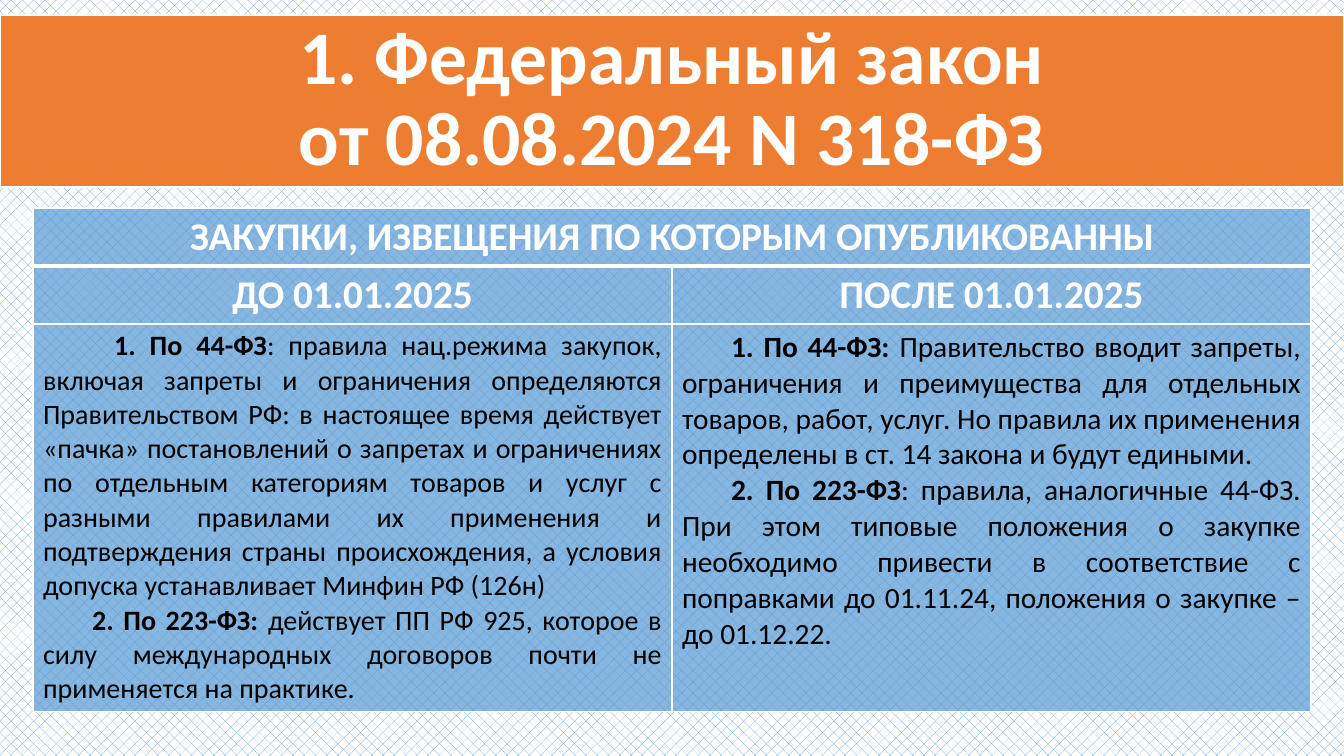
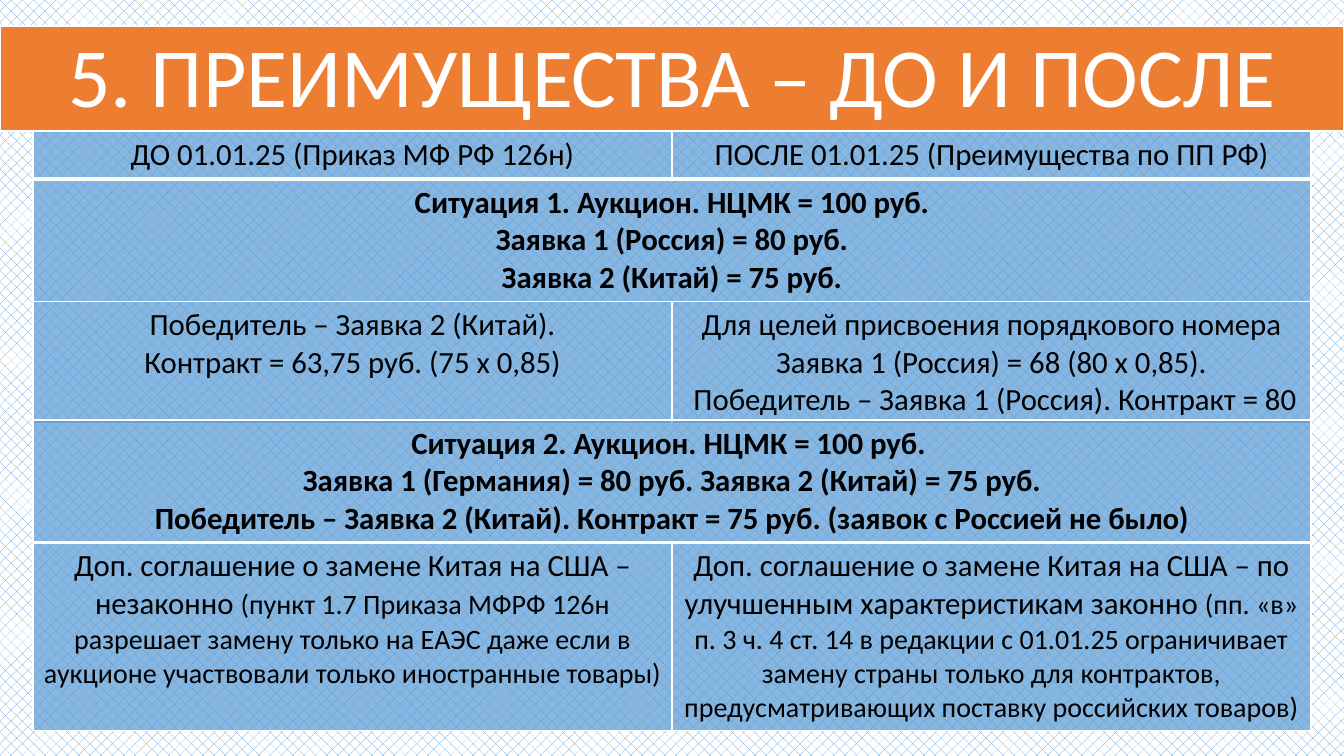
from dataclasses import dataclass

from lxml import etree
from pptx import Presentation
from pptx.dml.color import RGBColor
from pptx.enum.dml import MSO_PATTERN_TYPE as Pattern
from pptx.enum.shapes import MSO_SHAPE as Shape
from pptx.enum.text import MSO_ANCHOR as Anchor, PP_ALIGN as Align
from pptx.oxml.ns import qn
from pptx.util import Pt

EMU_PER_INCH = 914400
PX_PER_INCH = 100.8
SLIDE_WIDTH, SLIDE_HEIGHT = 1344, 756
TABLE_LEFT, COLUMN_WIDTH = 33, 639
INDENT = 49
FONT = "Calibri"
ORANGE = RGBColor(0xED, 0x7D, 0x31)
BLUE = RGBColor(0x5B, 0x9B, 0xD5)
WHITE = RGBColor(0xFF, 0xFF, 0xFF)
BLACK = RGBColor(0x00, 0x00, 0x00)
CELL_ALPHA = 73000
THIN, THICK = 1, 3


@dataclass
class Line:
    segments: list
    size: int = 22
    color: RGBColor = BLACK
    align: Align = Align.CENTER
    indent: int = 0


def px(value):
    return int(value * EMU_PER_INCH / PX_PER_INCH)


def plain(text):
    return Line([(text, False, None)])


def bold(text):
    return Line([(text, True, None)])


def heading(text):
    return Line([(text, True, None)], size=28, color=WHITE)


def clause(lead, text, size, indent=INDENT):
    return Line([(lead, True, None), (text, False, None)],
                size=size, align=Align.JUSTIFY, indent=indent)


def with_note(text, note):
    return Line([(text, False, None), (note, False, 20)])


def format_run(run, size, color, is_bold):
    run.font.name = FONT
    run.font.size = Pt(size)
    run.font.color.rgb = color
    run.font.bold = is_bold


def add_slide(presentation):
    slide = presentation.slides.add_slide(presentation.slide_layouts[6])
    fill = slide.background.fill
    fill.patterned()
    fill.pattern = Pattern.PERCENT_25
    fill.fore_color.rgb = BLUE
    fill.back_color.rgb = WHITE
    return slide


def add_title(slide, text, top, height, size, is_bold):
    band = slide.shapes.add_shape(Shape.RECTANGLE, 0, px(top), px(SLIDE_WIDTH), px(height))
    band.shadow.inherit = False
    band.fill.solid()
    band.fill.fore_color.rgb = ORANGE
    band.line.color.rgb = WHITE
    band.line.width = Pt(1.5)
    frame = band.text_frame
    frame.word_wrap = True
    frame.vertical_anchor = Anchor.BOTTOM
    paragraph = frame.paragraphs[0]
    paragraph.text = text
    paragraph.alignment = Align.CENTER
    paragraph.line_spacing = 0.9
    for run in paragraph.runs:
        format_run(run, size, WHITE, is_bold)


def style_cell(cell, top_width, bottom_width):
    cell.fill.solid()
    cell.fill.fore_color.rgb = BLUE
    properties = cell._tc.get_or_add_tcPr()
    color = properties.find(f"{qn('a:solidFill')}/{qn('a:srgbClr')}")
    etree.SubElement(color, qn("a:alpha"), val=str(CELL_ALPHA))
    widths = {"a:lnL": THIN, "a:lnR": THIN, "a:lnT": top_width, "a:lnB": bottom_width}
    for position, (tag, width) in enumerate(widths.items()):
        border = etree.Element(qn(tag), w=str(int(Pt(width))))
        border_fill = etree.SubElement(border, qn("a:solidFill"))
        etree.SubElement(border_fill, qn("a:srgbClr"), val=str(WHITE))
        properties.insert(position, border)


def fill_cell(cell, lines):
    frame = cell.text_frame
    for number, line in enumerate(lines):
        paragraph = frame.add_paragraph() if number else frame.paragraphs[0]
        paragraph.alignment = line.align
        if line.indent:
            paragraph._p.get_or_add_pPr().set("indent", str(px(line.indent)))
        for text, is_bold, size in line.segments:
            run = paragraph.add_run()
            run.text = text
            format_run(run, size or line.size, line.color, is_bold)


def add_comparison(slide, top, heights, rows):
    table = slide.shapes.add_table(
        len(rows), 2, px(TABLE_LEFT), px(top), px(2 * COLUMN_WIDTH), px(sum(heights))).table
    table.first_row = False
    table.horz_banding = False
    for column in table.columns:
        column.width = px(COLUMN_WIDTH)
    for number, (height, contents) in enumerate(zip(heights, rows)):
        table.rows[number].height = px(height)
        for cell in table.rows[number].cells:
            style_cell(cell, THICK if number == 1 else THIN, THICK if number == 0 else THIN)
        if len(contents) == 1:
            table.cell(number, 0).merge(table.cell(number, 1))
        for column, lines in enumerate(contents):
            fill_cell(table.cell(number, column), lines)


def build_law_slide(presentation):
    slide = add_slide(presentation)
    add_title(slide, "1. Федеральный закон\vот 08.08.2024 N 318-ФЗ", 15, 172, 54, True)
    before = [
        clause("1. По 44-ФЗ",
               ": правила нац.режима закупок, включая запреты и ограничения определяются "
               "Правительством РФ: в настоящее время действует «пачка» постановлений о запретах "
               "и ограничениях по отдельным категориям товаров и услуг с разными правилами их "
               "применения и подтверждения страны происхождения, а условия допуска "
               "устанавливает Минфин РФ (126н)", 20, 71),
        clause("2. По 223-ФЗ: ",
               "действует ПП РФ 925, которое в силу международных договоров почти не "
               "применяется на практике.", 20),
    ]
    after = [
        clause("1. По 44-ФЗ: ",
               "Правительство вводит запреты, ограничения и преимущества для отдельных товаров, "
               "работ, услуг. Но правила их применения определены в ст. 14 закона и будут "
               "едиными.", 21),
        clause("2. По 223-ФЗ",
               ": правила, аналогичные 44-ФЗ. При этом типовые положения о закупке необходимо "
               "привести в соответствие с поправками до 01.11.24, положения о закупке – "
               "до 01.12.22.", 21),
    ]
    add_comparison(slide, 208, [57, 58, 387], [
        [[heading("ЗАКУПКИ, ИЗВЕЩЕНИЯ ПО КОТОРЫМ ОПУБЛИКОВАННЫ")]],
        [[heading("ДО 01.01.2025")], [heading("ПОСЛЕ 01.01.2025")]],
        [before, after],
    ])


def build_advantages_slide(presentation):
    slide = add_slide(presentation)
    add_title(slide, "5. ПРЕИМУЩЕСТВА – ДО И ПОСЛЕ", 26, 105, 60, False)
    add_comparison(slide, 131, [48, 122, 119], [
        [[plain("ДО 01.01.25 (Приказ МФ РФ 126н)")],
         [plain("ПОСЛЕ 01.01.25 (Преимущества по ПП РФ)")]],
        [[bold("Ситуация 1. Аукцион. НЦМК = 100 руб."),
          bold("Заявка 1 (Россия) = 80 руб."),
          bold("Заявка 2 (Китай) = 75 руб.")]],
        [[plain("Победитель – Заявка 2 (Китай)."),
          plain("Контракт = 63,75 руб. (75 х 0,85)")],
         [plain("Для целей присвоения порядкового номера Заявка 1 (Россия) = 68 (80 х 0,85)."),
          plain(" Победитель – Заявка 1 (Россия). Контракт = 80")]],
    ])
    add_comparison(slide, 420, [122, 188], [
        [[bold("Ситуация 2. Аукцион. НЦМК = 100 руб. "),
          bold("Заявка 1 (Германия) = 80 руб. Заявка 2 (Китай) = 75 руб."),
          bold("Победитель – Заявка 2 (Китай). Контракт = 75 руб. (заявок с Россией не было)")]],
        [[with_note("Доп. соглашение о замене Китая на США – незаконно ",
                    "(пункт 1.7 Приказа МФРФ 126н разрешает замену только на ЕАЭС даже если "
                    "в аукционе участвовали только иностранные товары)")],
         [with_note("Доп. соглашение о замене Китая на США – по улучшенным характеристикам "
                    "законно ",
                    "(пп. «в» п. 3 ч. 4 ст. 14 в редакции с 01.01.25 ограничивает замену страны "
                    "только для контрактов, предусматривающих поставку российских товаров)")]],
    ])


def main():
    presentation = Presentation()
    presentation.slide_width = px(SLIDE_WIDTH)
    presentation.slide_height = px(SLIDE_HEIGHT)
    build_law_slide(presentation)
    build_advantages_slide(presentation)
    presentation.save("out.pptx")


if __name__ == "__main__":
    main()
